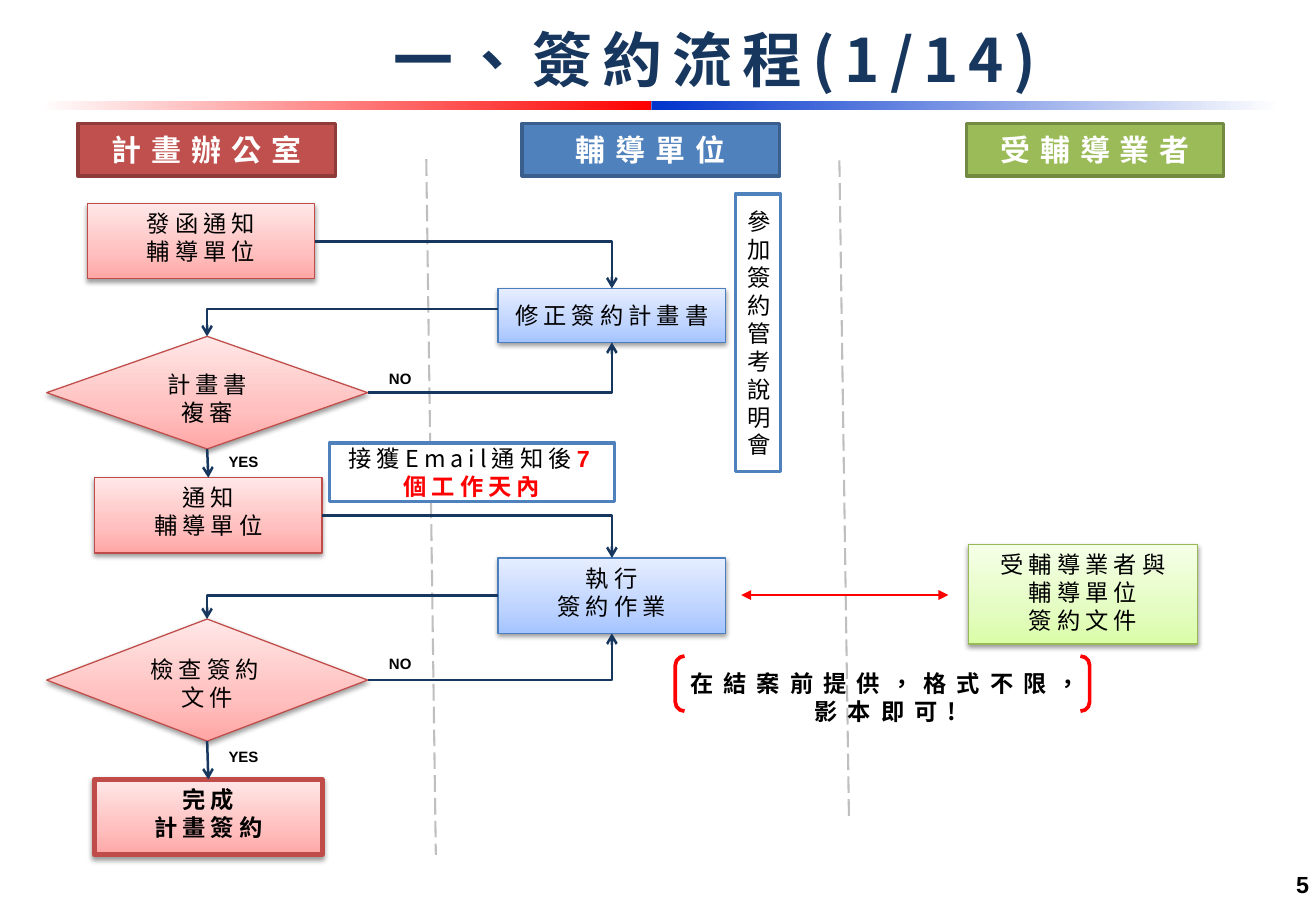
from lxml import etree
from pptx import Presentation
from pptx import util as u
from pptx.dml.color import RGBColor
from pptx.enum import dml, shapes, text
from pptx.oxml.ns import qn

COLORS = {"navy": "17375E", "red": "FF0000", "blue": "0033CC", "white": "FFFFFF", "black": "000000",
          "grey": "BFBFBF", "frame": "4F81BD"}
TONES = {
    "office": ("BF4C48", [(0, "FFA6A5"), (35, "FFC0BF"), (100, "FFE7E7")]),
    "advisor": ("4B7EBC", [(0, "A4C4FF"), (35, "BFD4FF"), (100, "E6EEFF")]),
    "client": ("98B955", [(0, "DAFDA7"), (35, "E4FCC2"), (100, "F5FFE7")]),
}
CJK, LATIN = "Noto Sans CJK SC", "Arial"
TITLE, PAGE = "一、簽約流程(1/14)", "5"
BARS = [(0.32, 5.12, ("white", "red")), (5.44, 5.25, ("blue", "white"))]
LANES = [("計畫辦公室", "C0504D", "8E3B39"), ("輔導單位", "4F81BD", "3A5F8C"),
         ("受輔導業者", "9BBB59", "738A42")]
DIVIDERS = [(3.56, 1.33, 3.64, 7.14), (7.01, 1.34, 7.09, 6.83)]
STEPS = {
    "notice": ("office", "RECTANGLE", (0.73, 1.7, 1.9, 0.63), ["發函通知", "輔導單位"]),
    "review": ("office", "DIAMOND", (0.39, 2.81, 2.68, 0.94), ["計畫書", "複審"]),
    "inform": ("office", "RECTANGLE", (0.79, 3.99, 1.9, 0.63), ["通知", "輔導單位"]),
    "check": ("office", "DIAMOND", (0.39, 5.17, 2.68, 1.02), ["檢查簽約文件"]),
    "done": ("office", "RECTANGLE", (0.79, 6.51, 1.9, 0.63), ["完成", "計畫簽約"]),
    "revise": ("advisor", "RECTANGLE", (4.16, 2.41, 1.9, 0.45), ["修正簽約計畫書"]),
    "sign": ("advisor", "RECTANGLE", (4.16, 4.66, 1.9, 0.63), ["執行", "簽約作業"]),
    "papers": ("client", "RECTANGLE", (8.09, 4.55, 1.91, 0.83), ["受輔導業者與", "輔導單位", "簽約文件"]),
}
TOP, LEFT, BOTTOM, RIGHT = range(4)
FLOWS = [("notice", RIGHT, "revise", TOP), ("review", RIGHT, "revise", BOTTOM),
         ("review", BOTTOM, "inform", TOP), ("inform", RIGHT, "sign", TOP),
         ("sign", LEFT, "check", TOP), ("check", RIGHT, "sign", BOTTOM),
         ("check", BOTTOM, "done", TOP)]
REVISED_EXIT = (4.16, 2.58)
DECISIONS = [("NO", 3.15, 3.04, 0.39), ("YES", 1.81, 3.73, 0.45),
             ("NO", 3.15, 5.42, 0.39), ("YES", 1.81, 6.19, 0.45)]
BRIEFING = "參加簽約管考說明會"
DEADLINE = [("接獲Email通知後", {}), ("7", {"font": LATIN, "color": "red", "bold": True}),
            ("個工作天內", {"color": "red", "bold": True})]
REMINDER = ["在結案前提供，格式不限，", "影本即可!"]

prs = Presentation()
prs.slide_width, prs.slide_height = u.Inches(10.99), u.Inches(7.5)
s = prs.slides.add_slide(prs.slide_layouts[6])


def rgb(name):
    """Return the colour for a name or a hex string."""
    return RGBColor.from_string(COLORS.get(name, name))


def write(sp, lines, size=14, color="black", bold=False, spc=3, font=CJK, align="CENTER",
          anchor="MIDDLE", wrap=True):
    """Fill a shape with paragraphs, each a string or a list of (text, format) runs."""
    tf = sp.text_frame
    tf.word_wrap = wrap
    tf.vertical_anchor = text.MSO_ANCHOR[anchor]
    for i, line in enumerate(lines):
        p = tf.add_paragraph() if i else tf.paragraphs[0]
        p.alignment = text.PP_ALIGN[align]
        for words, own in [(line, {})] if isinstance(line, str) else line:
            r = p.add_run()
            r.text = words
            r.font.size = u.Pt(size)
            r.font.bold = own.get("bold", bold)
            r.font.color.rgb = rgb(own.get("color", color))
            r.font.name = own.get("font", font)
            rPr = r.font._element
            rPr.set("lang", "zh-TW")
            rPr.set("spc", str(spc * 100))
            etree.SubElement(rPr, qn("a:ea"), typeface=r.font.name)


def label(at, lines, **fmt):
    """Add a text box."""
    write(s.shapes.add_textbox(*map(u.Inches, at)), lines, **fmt)


def block(kind, at, fill=None, line=None, width=2):
    """Add a preset shape with an optional fill and outline."""
    sp = s.shapes.add_shape(shapes.MSO_SHAPE[kind], *map(u.Inches, at))
    sp.shadow.inherit = False
    if fill:
        sp.fill.solid()
        sp.fill.fore_color.rgb = rgb(fill)
    else:
        sp.fill.background()
    if line:
        sp.line.color.rgb = rgb(line)
        sp.line.width = u.Pt(width)
    else:
        sp.line.fill.background()
    return sp


def shade(sp, stops, angle):
    """Give a shape a linear gradient."""
    sp.fill.gradient()
    sp.fill.gradient_angle = angle
    gs_lst = sp._element.spPr.find(".//" + qn("a:gsLst"))
    for gs in list(gs_lst):
        gs_lst.remove(gs)
    for pos, color in stops:
        gs = etree.SubElement(gs_lst, qn("a:gs"), pos=str(pos * 1000))
        etree.SubElement(gs, qn("a:srgbClr"), val=str(rgb(color)))


def drop_shadow(sp):
    """Add a soft shadow below a shape."""
    effects = sp._element.spPr.find(qn("a:effectLst"))
    shadow = etree.SubElement(effects, qn("a:outerShdw"), blurRad=str(u.Pt(3.1)),
                              dist=str(u.Pt(1.6)), dir="5400000", rotWithShape="0")
    clr = etree.SubElement(shadow, qn("a:srgbClr"), val=COLORS["black"])
    etree.SubElement(clr, qn("a:alpha"), val="38000")


def connect(start, end, color, width=1.5, head=None, tail=None, bent=False, dash=None):
    """Draw a line between two points given in inches."""
    kind = shapes.MSO_CONNECTOR.ELBOW if bent else shapes.MSO_CONNECTOR.STRAIGHT
    cn = s.shapes.add_connector(kind, *map(u.Inches, start + end))
    cn.line.color.rgb = rgb(color)
    cn.line.width = u.Pt(width)
    if dash:
        cn.line.dash_style = dash
    spPr = cn._element.spPr
    if bent:
        spPr.find(qn("a:prstGeom")).set("prst", "bentConnector2")
    for tag, mark in (("a:headEnd", head), ("a:tailEnd", tail)):
        if mark:
            etree.SubElement(spPr.find(qn("a:ln")), qn(tag), type=mark)
    etree.SubElement(spPr, qn("a:effectLst"))
    return cn


def site(name, side):
    """Return the middle of one side of a step."""
    x, y, w, h = STEPS[name][2]
    return [(x + w / 2, y), (x, y + h / 2), (x + w / 2, y + h), (x + w, y + h / 2)][side]


def main():
    """Build the slide."""
    for x, w, (first, last) in BARS:
        shade(block("RECTANGLE", (x, 0.84, w, 0.08)), [(0, first), (100, last)], 0)
    label((10.2, 7.22, 0.83, 0.29), [PAGE], bold=True, spc=0, font=LATIN, align="RIGHT", anchor="TOP")
    label((2.11, 0.07, 7.72, 0.77), [TITLE], size=36, color="navy", bold=True, spc=6, anchor="BOTTOM")

    for i, (name, fill, line) in enumerate(LANES):
        sp = block("RECTANGLE", (0.65 + 3.71 * i, 1.03, 2.15, 0.44), fill, line)
        write(sp, [name], size=18, color="white", bold=True, spc=6)
    for x1, y1, x2, y2 in DIVIDERS:
        connect((x1, y1), (x2, y2), "grey", 1.25, dash=dml.MSO_LINE.LONG_DASH)

    steps = {}
    for name, (tone, kind, at, lines) in STEPS.items():
        line, stops = TONES[tone]
        last = name == "done"
        sp = steps[name] = block(kind, at, line=line, width=3 if last else 0.75)
        shade(sp, stops, 90)
        drop_shadow(sp)
        write(sp, lines, bold=last, anchor="MIDDLE" if name == "revise" else "TOP")

    for a, side_a, b, side_b in FLOWS:
        cn = connect(site(a, side_a), site(b, side_b), "navy", tail="arrow", bent=side_a != BOTTOM)
        cn.begin_connect(steps[a], side_a)
        cn.end_connect(steps[b], side_b)
    cn = connect(REVISED_EXIT, site("review", TOP), "navy", tail="arrow", bent=True)
    cn.end_connect(steps["review"], TOP)
    connect((7.92, 4.97), (6.19, 4.97), "red", head="triangle", tail="triangle")

    for word, x, y, w in DECISIONS:
        label((x, y, w, 0.25), [word], size=9, bold=True, spc=0, font=LATIN, align="LEFT",
              anchor="TOP", wrap=False)
    write(block("RECTANGLE", (6.14, 1.62, 0.38, 2.32), "white", "frame"), [BRIEFING])
    write(block("RECTANGLE", (2.75, 3.7, 2.38, 0.49), "white", "frame"), [DEADLINE])
    label((5.61, 5.54, 3.57, 0.81), REMINDER, bold=True, spc=6, anchor="TOP", wrap=False)
    block("DOUBLE_BRACKET", (5.64, 5.48, 3.46, 0.46), line="red", width=2.25)
    prs.save("out.pptx")


if __name__ == "__main__":
    main()
